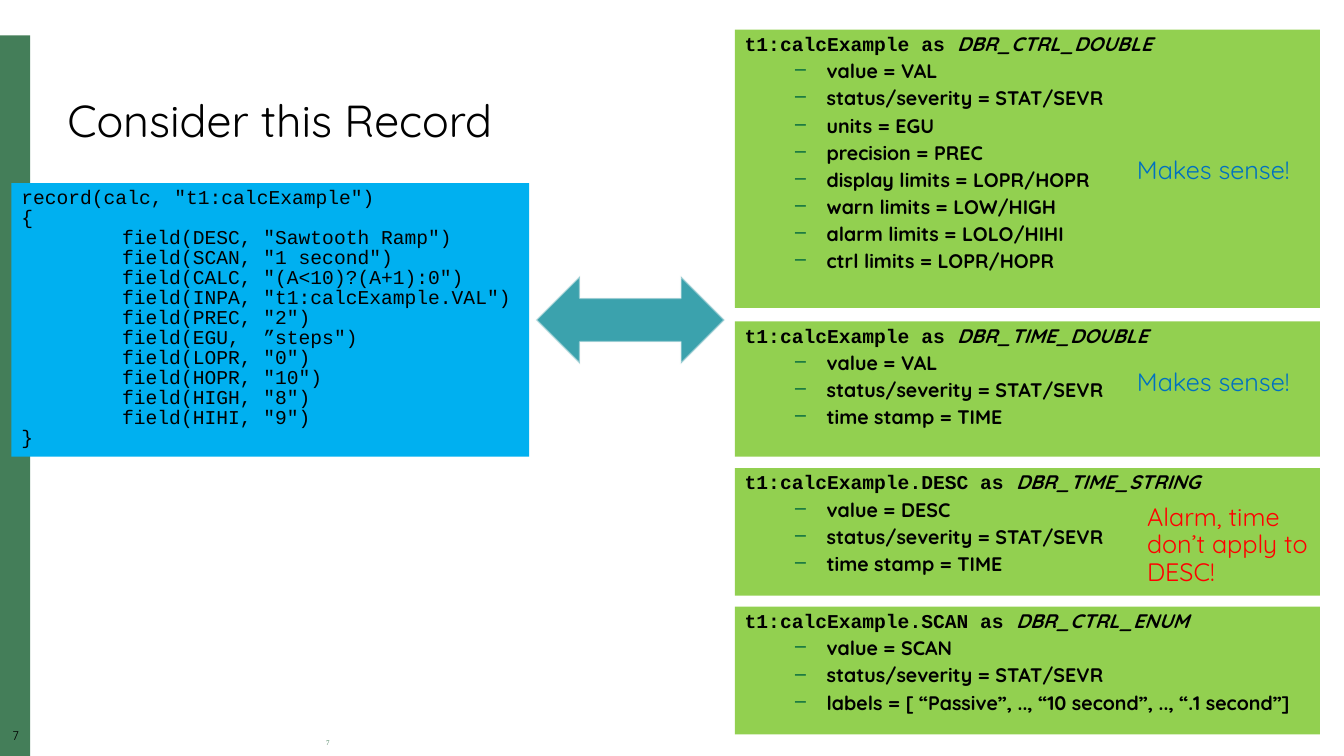
"""Build a slide that compares a calc record with the DBR data types it is served as."""
from lxml import etree
from pptx import Presentation
from pptx.dml.color import RGBColor
from pptx.enum.shapes import MSO_SHAPE
from pptx.enum.text import MSO_ANCHOR, PP_ALIGN
from pptx.oxml.ns import qn
from pptx.util import Pt

RECTANGLE = MSO_SHAPE.RECTANGLE
DOUBLE_ARROW = MSO_SHAPE.LEFT_RIGHT_ARROW
TOP = MSO_ANCHOR.TOP
LEFT, CENTER = PP_ALIGN.LEFT, PP_ALIGN.CENTER
SANS, MONO = "Quicksand", "Courier New"

presentation = Presentation()
presentation.slide_width, presentation.slide_height = Pt(960), Pt(540)
slide = presentation.slides.add_slide(presentation.slide_layouts[6])


def add_block(left, top, width, height, fill=None, preset=RECTANGLE):
    """Add a filled shape, or a text box when no fill is given."""
    box = [Pt(length) for length in (left, top, width, height)]
    if fill is None:
        shape = slide.shapes.add_textbox(*box)
    else:
        shape = slide.shapes.add_shape(preset, *box)
        shape.shadow.inherit = False
        shape.fill.solid()
        shape.fill.fore_color.rgb = RGBColor.from_string(fill)
        shape.line.fill.background()
    shape.text_frame.word_wrap = True
    shape.text_frame.vertical_anchor = TOP
    return shape


def add_text(paragraph, text, size=14, font=SANS, color="000000", bold=False,
             italic=False, align=LEFT, spacing=0.9):
    """Append one formatted run to a paragraph."""
    paragraph.alignment = align
    paragraph.line_spacing = spacing
    run = paragraph.add_run()
    run.text = text
    run.font.size = Pt(size)
    run.font.name = font
    run.font.bold = bold
    run.font.italic = italic
    run.font.color.rgb = RGBColor.from_string(color)


add_block(0, 25.2, 21.6, 514.8, "447E59")

side_number = add_block(0, 521.3, 22.3, 12.2).text_frame
side_number.margin_left = side_number.margin_right = 0
side_number.margin_top = side_number.margin_bottom = 0
add_text(side_number.paragraphs[0], "7", size=9, align=CENTER)

title = add_block(41, 67, 355, 42.5)
add_text(title.text_frame.paragraphs[0], "Consider this Record", size=32)

record_lines = [
    'record(calc, "t1:calcExample")',
    "{",
    '\tfield(DESC, "Sawtooth Ramp")',
    '\tfield(SCAN, "1 second")',
    '\tfield(CALC, "(A<10)?(A+1):0")',
    '\tfield(INPA, "t1:calcExample.VAL")',
    '\tfield(PREC, "2")',
    '\tfield(EGU,  ”steps")',
    '\tfield(LOPR, "0")',
    '\tfield(HOPR, "10")',
    '\tfield(HIGH, "8")',
    '\tfield(HIHI, "9")',
    "}",
]
record_frame = add_block(8.2, 130.8, 369.8, 195.4, "00B0F0").text_frame
for index, line in enumerate(record_lines):
    paragraph = record_frame.add_paragraph() if index else record_frame.paragraphs[0]
    tabs = etree.SubElement(paragraph._p.get_or_add_pPr(), qn("a:tabLst"))
    etree.SubElement(tabs, qn("a:tab"), pos=str(Pt(72)), algn="l")
    add_text(paragraph, line, font=MONO, spacing=0.85)

footer_number = add_block(120.2, 524.9, 228.2, 14.4)
add_text(footer_number.text_frame.paragraphs[0], "7", size=5, font="Times New Roman",
         color="447E59", align=CENTER)

status = "status/severity = STAT/SEVR"
panels = [
    (21.2, 198.8, "t1:calcExample", "DBR_CTRL_DOUBLE",
     ["value = VAL", status, "units = EGU", "precision = PREC",
      "display limits = LOPR/HOPR", "warn limits = LOW/HIGH",
      "alarm limits = LOLO/HIHI", "ctrl limits = LOPR/HOPR"]),
    (229.5, 96.7, "t1:calcExample", "DBR_TIME_DOUBLE",
     ["value = VAL", status, "time stamp = TIME"]),
    (334.3, 91.2, "t1:calcExample.DESC", "DBR_TIME_STRING",
     ["value = DESC", status, "time stamp = TIME"]),
    (433.4, 91.2, "t1:calcExample.SCAN", "DBR_CTRL_ENUM",
     ["value = SCAN", status, "labels = [ “Passive”, .., “10 second”, .., “.1 second”]"]),
]
for top, height, channel, data_type, mappings in panels:
    frame = add_block(524.9, top, 418, height, "92D050").text_frame
    heading = frame.paragraphs[0]
    add_text(heading, f"{channel} as ", font=MONO, bold=True)
    add_text(heading, data_type, bold=True, italic=True)
    for mapping in mappings:
        paragraph = frame.add_paragraph()
        paragraph.level = 1
        properties = paragraph._p.get_or_add_pPr()
        properties.set("marL", str(Pt(58.5)))
        properties.set("indent", str(Pt(-22.5)))
        bullet_color = etree.SubElement(properties, qn("a:buClr"))
        etree.SubElement(bullet_color, qn("a:srgbClr"), val="01673E")
        etree.SubElement(properties, qn("a:buChar"), char="–")
        paragraph.space_before = Pt(4.25)
        add_text(paragraph, mapping, bold=True)

arrow = add_block(383, 197.3, 134.6, 62.6, "3BA2AD", DOUBLE_ARROW)
arrow.line.color.rgb = RGBColor.from_string("F9F9F9")
arrow.line.width = Pt(1.35)
line_color = arrow.line._ln.find(".//" + qn("a:srgbClr"))
etree.SubElement(line_color, qn("a:alpha"), val="50000")

remarks = [
    (805, 109.4, 26.6, "Makes sense!", "0070C0"),
    (805, 260.6, 26.6, "Makes sense!", "0070C0"),
    (812.2, 357.1, 66.2, "Alarm, time don’t apply to DESC!", "FF0000"),
]
for left, top, height, remark, color in remarks:
    remark_box = add_block(left, top, 131, height)
    add_text(remark_box.text_frame.paragraphs[0], remark, size=18, color=color)

presentation.save("out.pptx")
